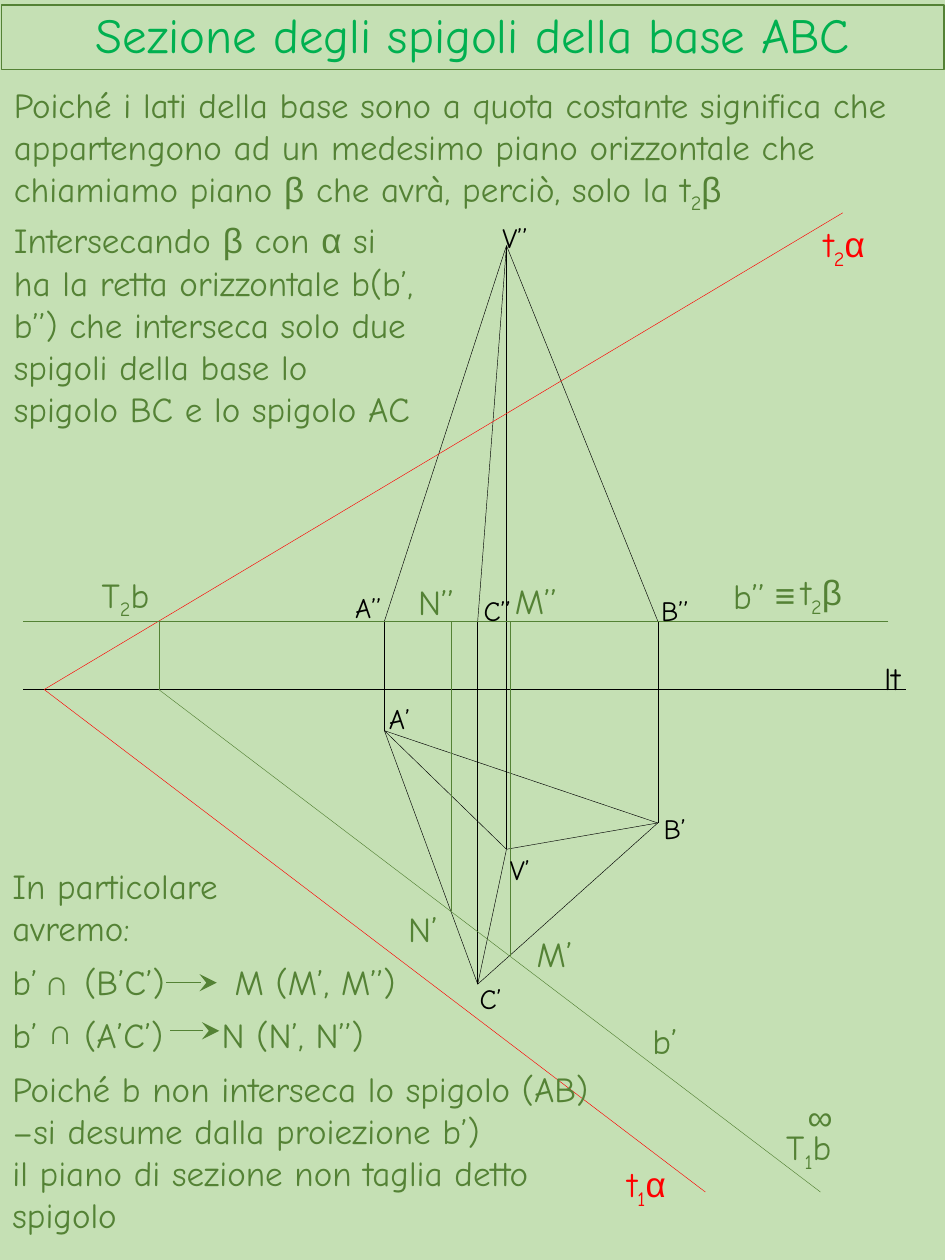
from itertools import groupby

from lxml.etree import SubElement
from pptx import Presentation
from pptx.dml.color import RGBColor
from pptx.enum.shapes import MSO_CONNECTOR, MSO_SHAPE
from pptx.enum.text import MSO_ANCHOR, PP_ALIGN
from pptx.oxml.ns import qn
from pptx.util import Cm, Pt

BACKGROUND, GREEN, TITLE_GREEN = "C5E0B4", "548235", "00B050"
BLACK, RED = "000000", "FF0000"
SUBSCRIPTS = {"₁": "1", "₂": "2"}
ARIAL_SYMBOLS = "αβ∞≡∩"

TITLE = "Sezione degli spigoli della base ABC"

BASE_Y, GROUND_Y = 12.52, 13.9
VERTICES = {
    "A’": (7.75, 14.73), "B’": (13.26, 16.59), "C’": (9.63, 19.84), "V’": (10.21, 17.12),
    "A’’": (7.75, BASE_Y), "B’’": (13.26, BASE_Y), "C’’": (9.63, BASE_Y), "V’’": (10.21, 4.95),
    "M’": (10.29, 19.28), "M’’": (10.29, BASE_Y),
    "N’": (9.09, 18.36), "N’’": (9.09, BASE_Y),
    "T₂b": (3.2, BASE_Y), "T’": (3.2, GROUND_Y), "T₁b": (16.54, 24.03),
    "α": (0.89, GROUND_Y), "t₂α": (16.99, 4.29), "t₁α": (14.22, 24.03),
    "lt sx": (0.46, GROUND_Y), "lt dx": (18.26, GROUND_Y),
    "b’’ sx": (0.46, BASE_Y), "b’’ dx": (17.91, BASE_Y),
}
EDGES = {
    BLACK: [("A’", "B’"), ("A’", "C’"), ("C’", "B’"), ("A’", "V’"), ("B’", "V’"), ("V’", "C’"),
            ("B’’", "B’"), ("A’’", "A’"), ("C’’", "C’"), ("V’’", "V’"),
            ("B’’", "A’’"), ("A’’", "V’’"), ("B’’", "V’’"), ("C’’", "V’’"), ("lt dx", "lt sx")],
    RED: [("α", "t₂α"), ("α", "t₁α")],
    GREEN: [("N’’", "N’"), ("M’’", "M’"), ("T₂b", "T’"), ("T’", "T₁b"), ("b’’ dx", "b’’ sx")],
}

LABELS = {
    (RED, 20, 1.12): [("t₂α", 16.36, 4.37, 1.6), ("t₁α", 12.4, 23.32, 1.57)],
    (BLACK, 18, 1.02): [("lt", 17.58, 13.16, 1.17)],
    (GREEN, 20, 1.12): [
        ("M’’", 10.13, 11.56, 1.4), ("M’", 10.57, 18.67, 1.3),
        ("N’’", 8.18, 11.58, 1.4), ("N’", 7.98, 18.16, 1.3),
        ("t₂β", 15.9, 11.38, 1.6), ("T₂b", 1.8, 11.43, 1.7),
        ("T₁b", 15.6, 22.56, 1.7), ("∞", 16.03, 21.95, 1.02),
        ("b’", 12.9, 20.42, 1.09), ("b’’", 14.53, 11.46, 1.3),
        ("≡", 15.37, 11.43, 0.95), ("∩", 0.64, 19.23, 1.07), ("∩", 0.71, 20.22, 1.07)],
    (BLACK, 16, 0.79): [
        ("A’", 7.59, 14.02, 1.09), ("C’", 9.42, 19.66, 0.99), ("B’", 13.13, 16.23, 0.99),
        ("A’’", 6.91, 11.79, 1.19), ("C’’", 9.5, 11.84, 1.09), ("B’’", 13.08, 11.84, 1.09),
        ("V’", 10.03, 17.07, 0.99), ("V’’", 9.88, 4.32, 1.19)],
}

EXPLANATIONS = [
    (["Poiché i lati della base sono a quota costante significa che appartengono ad un medesimo "
      "piano orizzontale che chiamiamo piano β che avrà, perciò, solo la t₂β"], 0.03, 1.55, 19, 2.82),
    (["Intersecando β con α si ha la retta orizzontale b(b’, b’’) che interseca solo due "
      "spigoli della base lo spigolo BC e lo spigolo AC"], 0.03, 4.29, 8.69, 5.38),
    (["In particolare avremo:"], 0, 17.3, 5.77, 1.96),
    (["Poiché b non interseca lo spigolo (AB) –si desume dalla proiezione b’)",
      "il piano di sezione non taglia detto spigolo"], 0, 21.39, 12.7, 3.68),
]

INTERSECTIONS = [
    ("b’\t(B’C’)\tM (M’, M’’)", 19.23, (1.45, 4.48), (3.35, 4.37, 19.81)),
    ("b’\t(A’C’)\tN (N’, N’’)", 20.3, (1.45, 4.22), (3.43, 4.42, 20.78)),
]


def color(hex_code):
    return RGBColor.from_string(hex_code)


def char_style(char):
    return "sub" if char in SUBSCRIPTS else "symbol" if char in ARIAL_SYMBOLS else "plain"


def write(paragraph, text, size, hex_code):
    font = paragraph.font
    font.name, font.size, font.color.rgb = "Comic Neue", Pt(size), color(hex_code)
    for style, chars in groupby(text, char_style):
        run = paragraph.add_run()
        run.text = "".join(SUBSCRIPTS.get(char, char) for char in chars)
        if style == "symbol":
            run.font.name = "Arial"
        elif style == "sub":
            run.font._element.set("baseline", "-25000")


def add_text(slide, texts, left, top, width, height, size=20, hex_code=GREEN):
    frame = slide.shapes.add_textbox(Cm(left), Cm(top), Cm(width), Cm(height)).text_frame
    frame.word_wrap = True
    for index, text in enumerate(texts):
        paragraph = frame.add_paragraph() if index else frame.paragraphs[0]
        write(paragraph, text, size, hex_code)
    return frame


def add_line(slide, start, end, hex_code, width=0.25):
    line = slide.shapes.add_connector(MSO_CONNECTOR.STRAIGHT, *map(Cm, start + end))
    line.line.color.rgb = color(hex_code)
    line.line.width = Pt(width)
    SubElement(line._element.spPr, qn("a:effectLst"))
    return line


def add_title(slide):
    banner = slide.shapes.add_shape(MSO_SHAPE.RECTANGLE, Cm(0.03), Cm(0.1), Cm(19), Cm(1.3))
    banner.shadow.inherit = False
    banner.fill.background()
    banner.line.color.rgb = color(GREEN)
    banner.line.width = Pt(0.75)
    frame = banner.text_frame
    frame.vertical_anchor = MSO_ANCHOR.MIDDLE
    paragraph = frame.paragraphs[0]
    paragraph.alignment = PP_ALIGN.CENTER
    paragraph.line_spacing = 0.9
    write(paragraph, TITLE, 28, TITLE_GREEN)


def add_intersection(slide, text, top, stops, arrow):
    paragraph = add_text(slide, [text], 0, top, 8.3, 1.12).paragraphs[0]
    properties = paragraph._p.get_or_add_pPr()
    tabs = properties.makeelement(qn("a:tabLst"))
    properties.insert(0, tabs)
    for stop in stops:
        SubElement(tabs, qn("a:tab"), pos=str(Cm(stop)), algn="l")
    left, right, y = arrow
    line = add_line(slide, (left, y), (right, y), GREEN, 0.5)
    SubElement(line.line._get_or_add_ln(), qn("a:tailEnd"), type="stealth", w="lg", len="lg")


def main():
    deck = Presentation()
    deck.slide_width, deck.slide_height = Cm(19.05), Cm(25.4)
    slide = deck.slides.add_slide(deck.slide_layouts[6])
    slide.background.fill.solid()
    slide.background.fill.fore_color.rgb = color(BACKGROUND)

    for hex_code, edges in EDGES.items():
        for start, end in edges:
            add_line(slide, VERTICES[start], VERTICES[end], hex_code)
    add_title(slide)
    for texts, *box in EXPLANATIONS:
        add_text(slide, texts, *box)
    for intersection in INTERSECTIONS:
        add_intersection(slide, *intersection)
    for (hex_code, size, height), labels in LABELS.items():
        for text, left, top, width in labels:
            add_text(slide, [text], left, top, width, height, size, hex_code)
    deck.save("out.pptx")


if __name__ == "__main__":
    main()
